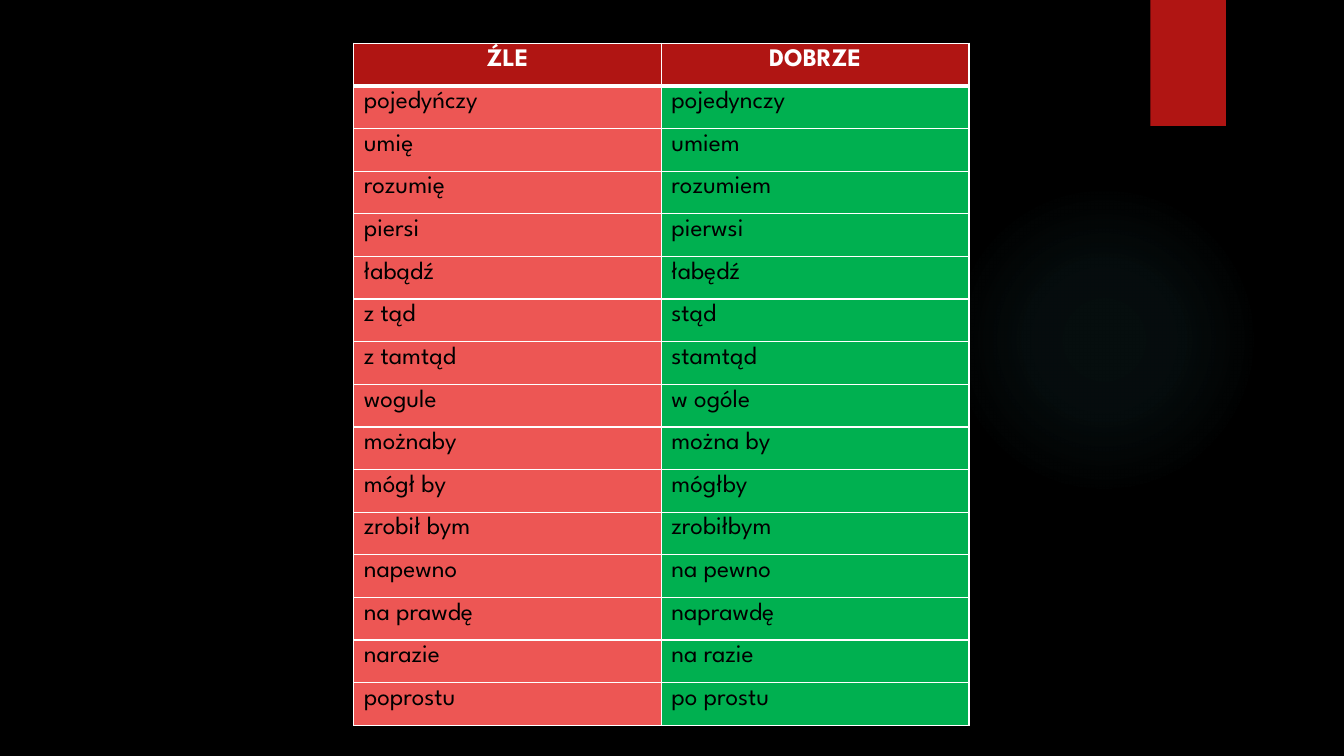
from dataclasses import dataclass
from lxml.etree import SubElement
from pptx import Presentation
from pptx.dml.color import RGBColor
from pptx.enum.shapes import MSO_SHAPE
from pptx.enum.text import PP_ALIGN
from pptx.oxml import parse_xml
from pptx.oxml.ns import nsdecls, qn
from pptx.util import Inches, Pt


@dataclass(frozen=True)
class Theme:
    font: str = "League Spartan"
    size: int = 18
    back: str = "000000"
    text: str = "000000"
    light: str = "FFFFFF"
    accent: str = "B01513"
    wrong: str = "ED5654"
    right: str = "00B050"
    glow: str = "50B9C1"
    thin: float = 1
    thick: float = 3


WORDS = [
    ("ŹLE", "DOBRZE"),
    ("pojedyńczy", "pojedynczy"),
    ("umię", "umiem"),
    ("rozumię", "rozumiem"),
    ("piersi", "pierwsi"),
    ("łabądź", "łabędź"),
    ("z tąd", "stąd"),
    ("z tamtąd", "stamtąd"),
    ("wogule", "w ogóle"),
    ("możnaby", "można by"),
    ("mógł by", "mógłby"),
    ("zrobił bym", "zrobiłbym"),
    ("napewno", "na pewno"),
    ("na prawdę", "naprawdę"),
    ("narazie", "na razie"),
    ("poprostu", "po prostu"),
]


def paint(fill, color):
    fill.solid()
    fill.fore_color.rgb = RGBColor.from_string(color)


class Deck:
    def __init__(self, theme):
        self.theme = theme
        self.prs = Presentation()
        self.prs.slide_width = Inches(13.33)
        self.prs.slide_height = Inches(7.5)
        self.slide = self.prs.slides.add_slide(self.prs.slide_layouts[6])
        paint(self.slide.background.fill, theme.back)

    def shape(self, kind, *box):
        item = self.slide.shapes.add_shape(kind, *map(Inches, box))
        item.shadow.inherit = False
        item.line.fill.background()
        return item

    def glow(self, *box):
        """Add a faint round light that fades out from its centre."""
        item = self.shape(MSO_SHAPE.OVAL, *box)
        stops = "".join(
            f'<a:gs pos="{spot * 1000}"><a:srgbClr val="{self.theme.glow}">'
            f'<a:alpha val="{alpha * 1000}"/></a:srgbClr></a:gs>'
            for spot, alpha in [(0, 7), (36, 6), (69, 0)])
        grad = parse_xml(
            f'<a:gradFill {nsdecls("a")} rotWithShape="1"><a:gsLst>{stops}</a:gsLst>'
            '<a:path path="circle"><a:fillToRect l="50000" t="50000" '
            'r="50000" b="50000"/></a:path></a:gradFill>')
        item._element.spPr.find(qn("a:prstGeom")).addnext(grad)

    def ribbon(self, *box):
        """Add an accent block with a soft shadow below it."""
        item = self.shape(MSO_SHAPE.RECTANGLE, *box)
        paint(item.fill, self.theme.accent)
        effects = item._element.spPr.find(qn("a:effectLst"))
        effects.append(parse_xml(
            f'<a:outerShdw {nsdecls("a")} blurRad="{Pt(3)}" dist="{Pt(2)}" '
            'dir="5400000" rotWithShape="0"><a:srgbClr val="000000">'
            '<a:alpha val="45000"/></a:srgbClr></a:outerShdw>'))

    def border(self, cell, row):
        """Draw the cell's edges, with a thick rule under the header."""
        theme = self.theme
        widths = {
            "lnL": theme.thin,
            "lnR": theme.thin,
            "lnT": theme.thick if row == 1 else theme.thin,
            "lnB": theme.thick if row == 0 else theme.thin,
        }
        props = cell._tc.get_or_add_tcPr()
        for side, width in widths.items():
            line = SubElement(props, qn(f"a:{side}"), w=str(Pt(width)))
            fill = SubElement(line, qn("a:solidFill"))
            SubElement(fill, qn("a:srgbClr"), val=theme.light)

    def cell(self, cell, text, row, col):
        theme, head = self.theme, row == 0
        self.border(cell, row)
        paint(cell.fill, theme.accent if head else (theme.wrong, theme.right)[col])
        cell.text = text
        para = cell.text_frame.paragraphs[0]
        para.alignment = PP_ALIGN.CENTER if head else PP_ALIGN.LEFT
        font = para.font
        font.name, font.size, font.bold = theme.font, Pt(theme.size), head
        font.color.rgb = RGBColor.from_string(theme.light if head else theme.text)

    def table(self, rows, *box):
        frame = self.slide.shapes.add_table(
            len(rows), len(rows[0]), *map(Inches, box))
        for row, texts in enumerate(rows):
            for col, text in enumerate(texts):
                self.cell(frame.table.cell(row, col), text, row, col)


def main():
    deck = Deck(Theme())
    deck.glow(9.41, 1.83, 3.08, 3.08)
    deck.ribbon(11.41, 0, 0.75, 1.25)
    deck.table(WORDS, 3.51, 0.43, 6.1, 6.77)
    deck.prs.save("out.pptx")


if __name__ == "__main__":
    main()
